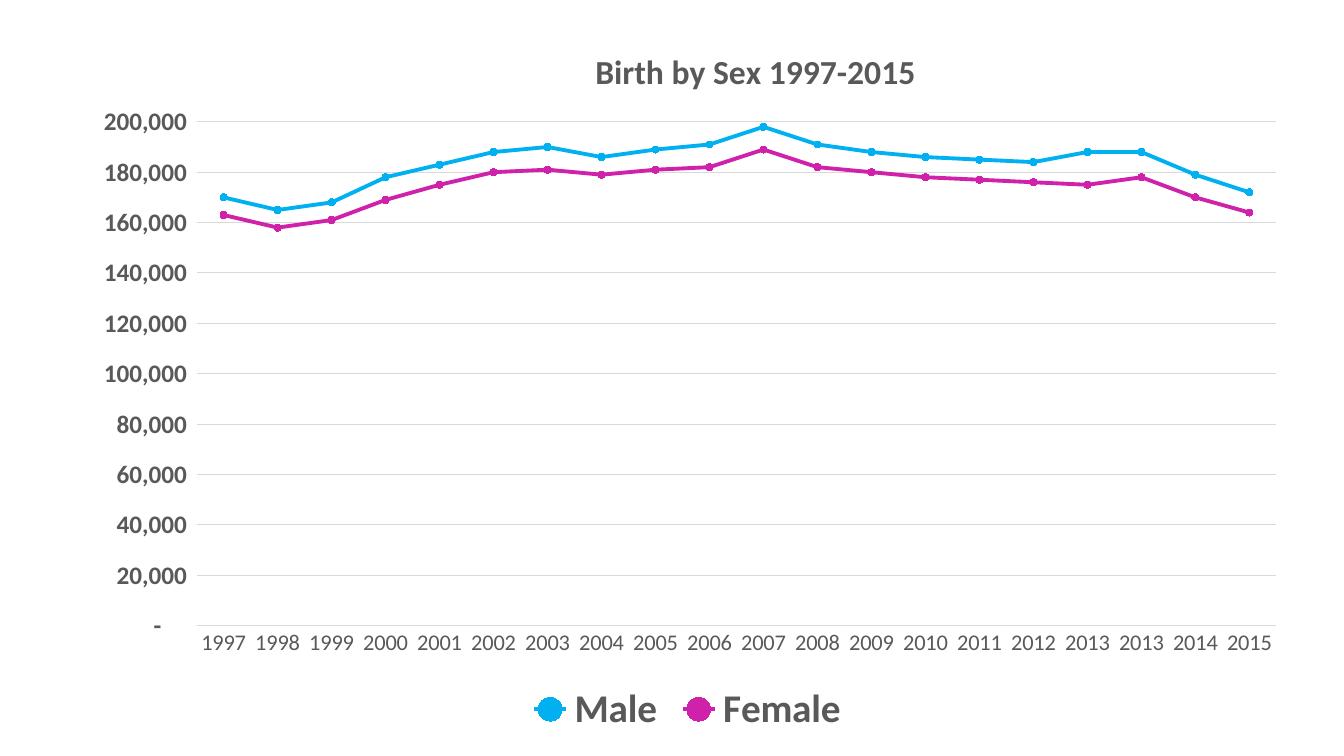
"""Build a slide with a line chart of births by sex."""
import lxml.etree
import pptx
import pptx.chart.data
import pptx.dml.color
import pptx.enum.chart
import pptx.oxml.ns
import pptx.util

WIDTH, HEIGHT = 13.33, 7.5
FONT = "Calibri"
TEXT, GRID = "595959", "D9D9D9"
NUMBER_FORMAT = r'_(* #,##0_);_(* \(#,##0\);_(* "-"??_);_('
YEARS = [str(year) for year in [*range(1997, 2014), *range(2013, 2016)]]
BIRTHS_IN_THOUSANDS = {
    "Male": ("00B0F0", [170, 165, 168, 178, 183, 188, 190, 186, 189, 191,
                        198, 191, 188, 186, 185, 184, 188, 188, 179, 172]),
    "Female": ("CF21AA", [163, 158, 161, 169, 175, 180, 181, 179, 181, 182,
                          189, 182, 180, 178, 177, 176, 175, 178, 170, 164]),
}


def color(hex_value):
    """Return the colour for a hex string."""
    return pptx.dml.color.RGBColor.from_string(hex_value)


def format_font(font, size, bold=False):
    """Give a font the typeface and colour of the slide."""
    font.name, font.size, font.bold = FONT, pptx.util.Pt(size), bold
    font.color.rgb = color(TEXT)


def format_line(line, hex_value, width):
    """Set the colour and the width in points of a line."""
    line.color.rgb = color(hex_value)
    line.width = pptx.util.Pt(width)


def set_layout(element, index, **values):
    """Place a chart part by shares of the chart's size."""
    tag = pptx.oxml.ns.qn
    for existing in element.findall(tag("c:layout")):
        element.remove(existing)
    layout = lxml.etree.Element(tag("c:layout"))
    manual = lxml.etree.SubElement(layout, tag("c:manualLayout"))
    for name, value in values.items():
        lxml.etree.SubElement(manual, tag(f"c:{name}")).set("val", str(value))
    element.insert(index, layout)


def add_line_chart(page, left, top, width, height):
    """Add the births chart, with its place in shares of the slide's size."""
    data = pptx.chart.data.CategoryChartData(number_format="#,##0")
    data.categories = YEARS
    for name, (_, births) in BIRTHS_IN_THOUSANDS.items():
        data.add_series(name, [value * 1000 for value in births])
    inches = pptx.util.Inches
    return page.shapes.add_chart(
        pptx.enum.chart.XL_CHART_TYPE.LINE_MARKERS,
        inches(left * WIDTH), inches(top * HEIGHT),
        inches(width * WIDTH), inches(height * HEIGHT), data).chart


def format_title(chart, text):
    """Write and place the chart title."""
    chart.has_title = True
    para = chart.chart_title.text_frame.paragraphs[0]
    span = para.add_run()
    span.text = text
    format_font(span.font, 24, bold=True)
    chart.chart_title.include_in_layout = False
    set_layout(chart.chart_title._element, 1,
               xMode="edge", yMode="edge", x=0.42, y=0.03)


def format_axes(chart):
    """Format both axes, the gridlines and the plot area."""
    years, births = chart.category_axis, chart.value_axis
    for axis, size, bold in ((years, 16, False), (births, 18, True)):
        axis.major_tick_mark = pptx.enum.chart.XL_TICK_MARK.NONE
        axis.minor_tick_mark = pptx.enum.chart.XL_TICK_MARK.NONE
        format_font(axis.tick_labels.font, size, bold)
    format_line(years.format.line, GRID, 0.75)
    births.format.line.fill.background()
    births.minimum_scale, births.maximum_scale = 0, 200000
    births.major_unit = 20000
    births.has_major_gridlines = True
    format_line(births.major_gridlines.format.line, GRID, 0.75)
    births.tick_labels.number_format = NUMBER_FORMAT
    births.tick_labels.number_format_is_linked = False
    plot_area = chart._chartSpace.chart.plotArea
    set_layout(plot_area, 0, layoutTarget="inner", xMode="edge", yMode="edge",
               x=0.1, y=0.14, w=0.88, h=0.7)


def format_series(chart):
    """Colour the lines and their round markers."""
    for series in chart.plots[0].series:
        hex_value = BIRTHS_IN_THOUSANDS[series.name][0]
        series.smooth = False
        format_line(series.format.line, hex_value, 2.75)
        marker = series.marker
        marker.style = pptx.enum.chart.XL_MARKER_STYLE.CIRCLE
        marker.size = 5
        marker.format.fill.solid()
        marker.format.fill.fore_color.rgb = color(hex_value)
        format_line(marker.format.line, hex_value, 0.75)


def format_legend(chart):
    """Put the legend below the plot."""
    chart.has_legend = True
    chart.legend.position = pptx.enum.chart.XL_LEGEND_POSITION.BOTTOM
    chart.legend.include_in_layout = False
    format_font(chart.legend.font, 28, bold=True)


def main():
    """Build and save the deck."""
    deck = pptx.Presentation()
    deck.slide_width = pptx.util.Inches(WIDTH)
    deck.slide_height = pptx.util.Inches(HEIGHT)
    page = deck.slides.add_slide(deck.slide_layouts.get_by_name("Blank"))
    chart = add_line_chart(page, 0.055, 0.028, 0.913, 0.952)
    chart.font.name, chart.font.size = FONT, pptx.util.Pt(10)
    chart.plots[0].vary_by_categories = False
    format_title(chart, "Birth by Sex 1997-2015")
    format_axes(chart)
    format_series(chart)
    format_legend(chart)
    deck.save("out.pptx")


if __name__ == "__main__":
    main()
